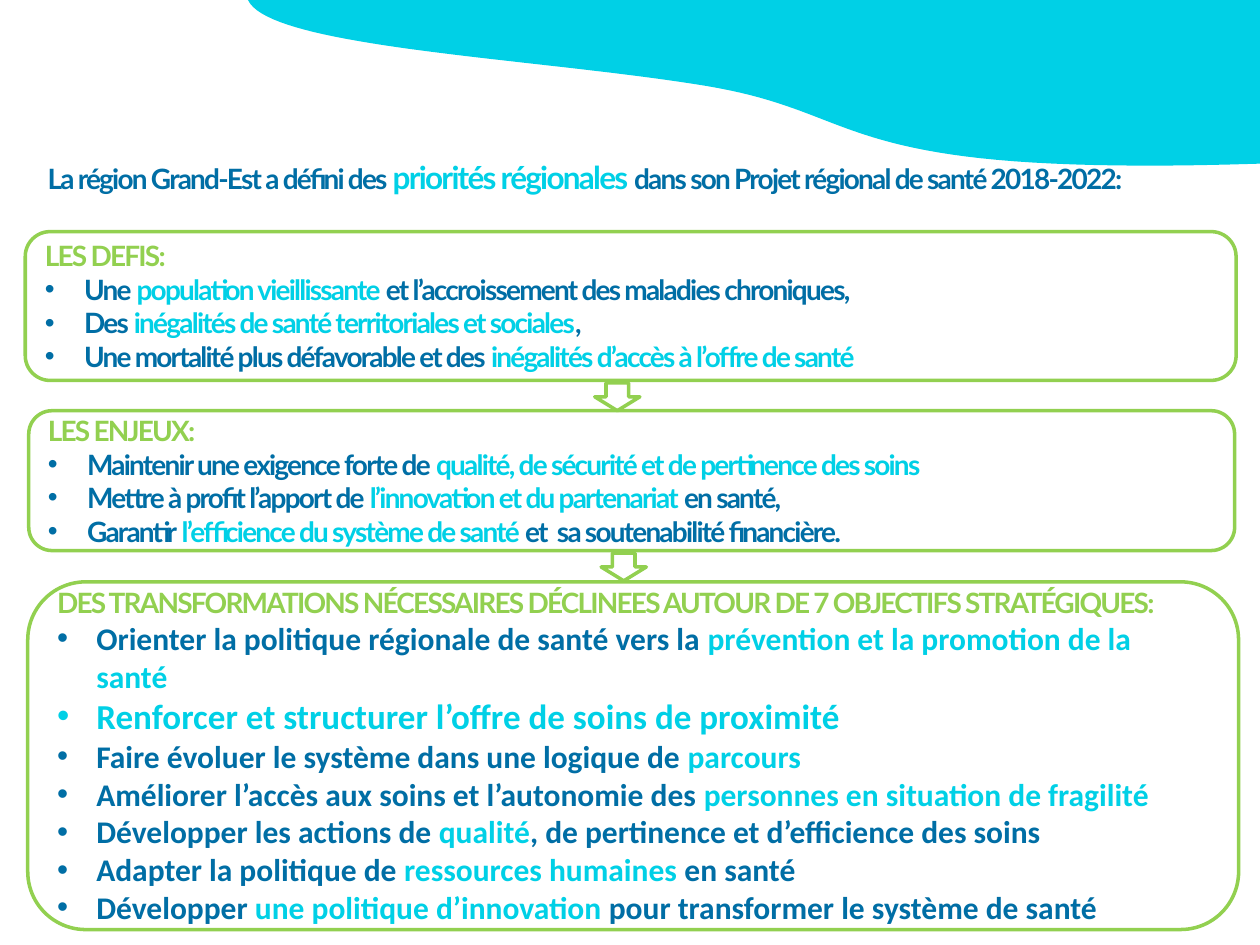
from lxml import etree
from pptx import Presentation
from pptx.dml.color import RGBColor
from pptx.enum.shapes import MSO_SHAPE
from pptx.enum.text import MSO_ANCHOR, PP_ALIGN
from pptx.oxml.ns import qn
from pptx.util import Cm, Pt

BLUE = RGBColor(0x00, 0x6E, 0xA5)
CYAN = RGBColor(0x00, 0xD0, 0xE6)
GREEN = RGBColor(0x92, 0xD0, 0x50)

# Text formats; spacing is in hundredths of a point
TIGHT = {"name": "Lato", "size": Pt(16), "bold": True}
WIDE = {"name": "Calibri", "size": Pt(18), "bold": True}
TIGHT_SPACING, WIDE_SPACING = -100, 0

# Asterisks enclose the highlighted words
INTRO = ("La région Grand-Est a défini des *priorités régionales *"
         "dans son Projet régional de santé 2018-2022:")
CHALLENGES = [
    "Une *population vieillissante *et l’accroissement des maladies chroniques, ",
    "Des *inégalités de santé territoriales et sociales*, ",
    "Une mortalité plus défavorable et des *inégalités d’accès à l’offre de santé*",
]
STAKES = [
    "Maintenir une exigence forte de *qualité, de sécurité et de pertinence des soins*",
    "Mettre à profit l’apport de *l’innovation et du partenariat *en santé, ",
    "Garantir *l’efficience du système de santé *et  sa soutenabilité financière.",
]
GOALS = [
    "Orienter la politique régionale de santé vers la "
    "*prévention et la promotion de la santé*",
    "*Renforcer et structurer l’offre de soins de proximité*",
    "Faire évoluer le système dans une logique de *parcours*",
    "Améliorer l’accès aux soins et l’autonomie des "
    "*personnes en situation de fragilité*",
    "Développer les actions de *qualité*, de pertinence et d’efficience des soins",
    "Adapter la politique de *ressources humaines *en santé",
    "Développer *une politique d’innovation *pour transformer le système de santé",
]


def add_run(p, text, color, fmt, spacing):
    r = p.add_run()
    r.text = text
    for name, value in fmt.items():
        setattr(r.font, name, value)
    r.font.color.rgb = color
    r._r.get_or_add_rPr().set("spc", str(spacing))


def add_marked_text(p, text, fmt, spacing, big=None):
    """Write blue text with cyan highlights, optionally in a bigger size."""
    for i, part in enumerate(text.split("*")):
        if part and i % 2:
            size = big or fmt["size"]
            add_run(p, part, CYAN, {**fmt, "size": size}, spacing)
        elif part:
            add_run(p, part, BLUE, fmt, spacing)


def add_bullet(p):
    pPr = p._p.get_or_add_pPr()
    pPr.set("marL", str(Cm(0.79)))
    pPr.set("indent", str(-Cm(0.79)))
    etree.SubElement(pPr, qn("a:buFont")).set("typeface", "Arial")
    etree.SubElement(pPr, qn("a:buChar")).set("char", "•")


def add_outline(s, kind, left, top, width, height):
    sp = s.shapes.add_shape(kind, Cm(left), Cm(top), Cm(width), Cm(height))
    sp.shadow.inherit = False
    sp.fill.background()
    sp.line.color.rgb = GREEN
    sp.line.width = Pt(2)
    return sp


def add_box(s, place, title, items, fmt, spacing, align):
    tf = add_outline(s, MSO_SHAPE.ROUNDED_RECTANGLE, *place).text_frame
    tf.word_wrap = True
    tf.vertical_anchor = MSO_ANCHOR.MIDDLE
    p = tf.paragraphs[0]
    p.alignment = align
    add_run(p, title, GREEN, TIGHT, TIGHT_SPACING)
    for item in items:
        p = tf.add_paragraph()
        p.alignment = align
        add_bullet(p)
        # A fully highlighted item stands out in a bigger size
        big = Pt(20) if item.startswith("*") else None
        add_marked_text(p, item, fmt, spacing, big)


def add_intro(s):
    sp = s.shapes.add_textbox(Cm(0.71), Cm(3.07), Cm(24.23), Cm(8.28))
    tf = sp.text_frame
    tf.word_wrap = True
    p = tf.paragraphs[0]
    p.alignment = PP_ALIGN.JUSTIFY
    add_marked_text(p, INTRO, TIGHT, TIGHT_SPACING, Pt(18))


def curve(points, steps=40):
    """Return points along a cubic Bézier curve, without its start."""
    result = []
    for i in range(1, steps + 1):
        t = i / steps
        weights = ((1 - t) ** 3, 3 * t * (1 - t) ** 2, 3 * t * t * (1 - t), t ** 3)
        result.append(tuple(
            Cm(sum(w * pt[axis] for w, pt in zip(weights, points)))
            for axis in (0, 1)))
    return result


def add_wave(s):
    start, middle, end = (5, 0), (14.22, 1.73), (25.4, 3.3)
    edge = curve([start, (5.44, 0.97), (10.82, 1.17), middle])
    edge += curve([middle, (17.63, 2.29), (16.66, 3.58), end])
    fb = s.shapes.build_freeform(Cm(25.4), 0)
    fb.add_line_segments([(Cm(5), 0)] + edge, close=True)
    sp = fb.convert_to_shape()
    sp.shadow.inherit = False
    sp.fill.solid()
    sp.fill.fore_color.rgb = CYAN
    sp.line.fill.background()


def main():
    prs = Presentation()
    prs.slide_width, prs.slide_height = Cm(25.4), Cm(19.05)
    s = prs.slides.add_slide(prs.slide_layouts[6])

    # Header
    add_wave(s)
    add_intro(s)

    # Three stages
    add_box(s, (0.51, 4.67, 24.41, 3), "LES DEFIS:", CHALLENGES,
            TIGHT, TIGHT_SPACING, PP_ALIGN.JUSTIFY)
    add_box(s, (0.58, 8.28, 24.31, 2.82), "LES ENJEUX:", STAKES,
            TIGHT, TIGHT_SPACING, PP_ALIGN.JUSTIFY)
    add_box(s, (0.56, 11.73, 24.41, 7.01),
            "DES TRANSFORMATIONS NÉCESSAIRES DÉCLINEES AUTOUR DE "
            "7 OBJECTIFS STRATÉGIQUES:",
            GOALS, WIDE, WIDE_SPACING, PP_ALIGN.LEFT)

    # Arrows between the stages
    for left, top in ((11.99, 7.72), (12.12, 11.15)):
        add_outline(s, MSO_SHAPE.DOWN_ARROW, left, top, 0.91, 0.56)

    prs.save("out.pptx")


if __name__ == "__main__":
    main()
